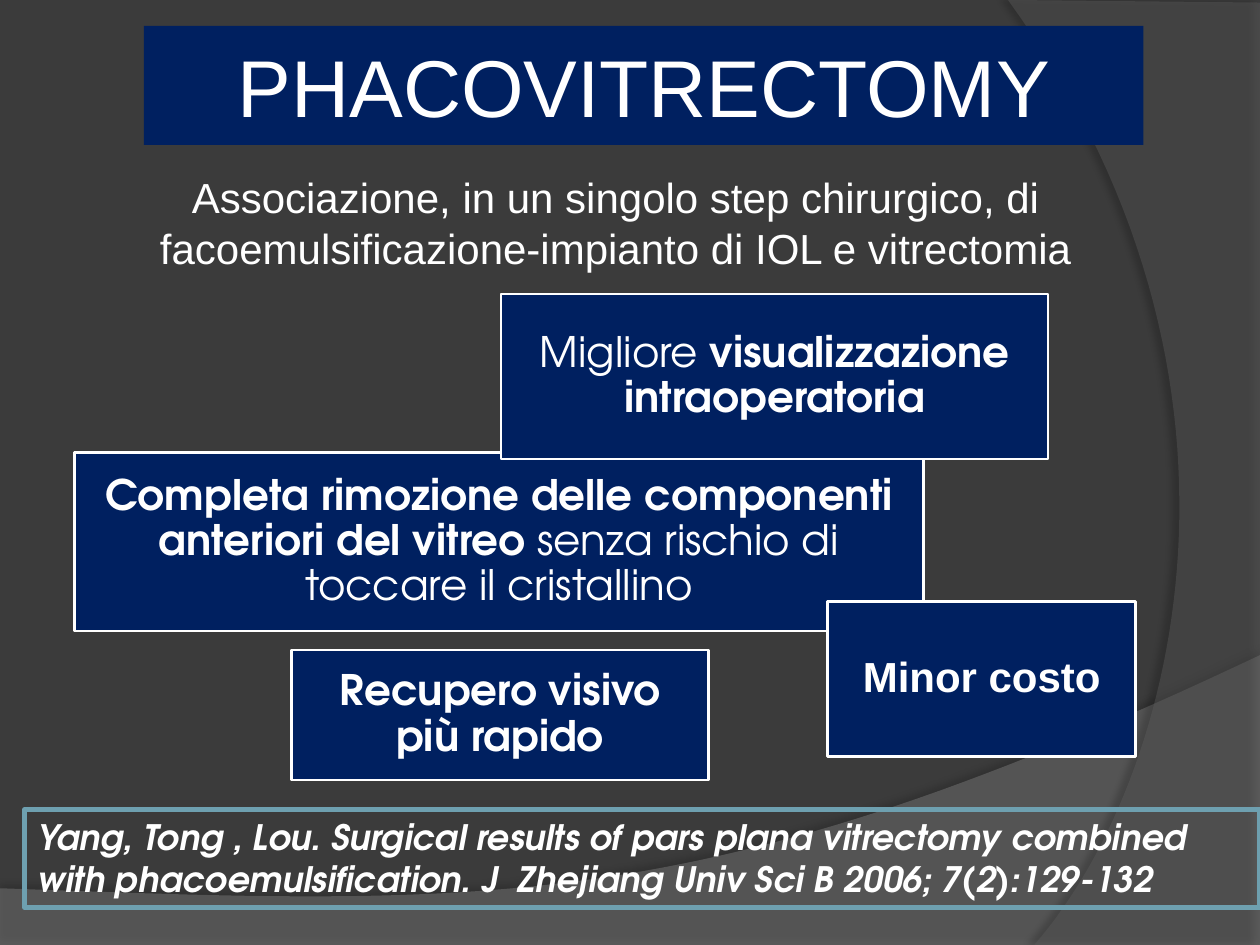
from dataclasses import dataclass
from typing import Optional

from lxml import etree
from pptx import Presentation
from pptx.dml.color import RGBColor
from pptx.enum import shapes, text
from pptx.oxml import ns
from pptx.util import Pt

Point = tuple[float, float]


@dataclass(frozen=True)
class Theme:
    background: str = "3B3B3B"
    wave: str = "7F7F7F"
    arc: str = "5E5E5E"
    navy: str = "002060"
    white: str = "FFFFFF"
    teal: str = "6EA0B0"
    sans: str = "Arial"
    geometric: str = "TeX Gyre Adventor"
    title_size: float = 46
    body_size: float = 24
    citation_size: float = 20


THEME = Theme()


@dataclass(frozen=True)
class Run:
    words: str
    bold: bool = False


@dataclass(frozen=True)
class Panel:
    left: float
    top: float
    width: float
    height: float
    runs: tuple[Run, ...]
    font: str = THEME.geometric
    size: float = THEME.body_size
    fill: Optional[str] = THEME.navy
    line: Optional[str] = THEME.white
    line_width: float = 1.5
    inset_x: float = 7.2
    inset_y: float = 7.2
    anchor: text.MSO_ANCHOR = text.MSO_ANCHOR.MIDDLE
    align: text.PP_ALIGN = text.PP_ALIGN.CENTER
    spacing: float = 0.9
    italic: bool = False


@dataclass(frozen=True)
class Swoosh:
    before: tuple[Point, ...]
    curve: tuple[Point, Point, Point, Point]
    color: str
    opacity: int
    shadow_opacity: int
    shadow_distance: float
    shadow_angle: int


def rgb(color: str) -> RGBColor:
    return RGBColor.from_string(color)


def bezier(curve: tuple[Point, Point, Point, Point], steps: int = 60) -> list[Point]:
    points = []
    for step in range(steps + 1):
        t = step / steps
        weights = ((1 - t) ** 3, 3 * t * (1 - t) ** 2, 3 * t**2 * (1 - t), t**3)
        points.append(tuple(sum(w * p[axis] for w, p in zip(weights, curve)) for axis in (0, 1)))
    return points


def draw_swoosh(slide, swoosh: Swoosh) -> None:
    outline = [(Pt(x), Pt(y)) for x, y in (*swoosh.before, *bezier(swoosh.curve))]
    builder = slide.shapes.build_freeform(*outline[0])
    builder.add_line_segments(outline[1:], close=True)
    shape = builder.convert_to_shape()
    shape.line.fill.background()
    shape.fill.solid()
    shape.fill.fore_color.rgb = rgb(swoosh.color)
    shape.shadow.inherit = False

    # Transparency and soft shadow
    properties = shape._element.spPr
    tint = properties.find(ns.qn("a:solidFill")).find(ns.qn("a:srgbClr"))
    etree.SubElement(tint, ns.qn("a:alpha"), val=str(swoosh.opacity * 1000))
    shadow = etree.SubElement(
        properties.find(ns.qn("a:effectLst")), ns.qn("a:outerShdw"),
        blurRad=str(Pt(4)), dist=str(Pt(swoosh.shadow_distance)),
        dir=str(swoosh.shadow_angle * 60000), algn="ctr", rotWithShape="0")
    shade = etree.SubElement(shadow, ns.qn("a:srgbClr"), val="000000")
    etree.SubElement(shade, ns.qn("a:alpha"), val=str(swoosh.shadow_opacity * 1000))


def draw_panel(slide, panel: Panel) -> None:
    box = (Pt(panel.left), Pt(panel.top), Pt(panel.width), Pt(panel.height))
    if panel.fill or panel.line:
        shape = slide.shapes.add_shape(shapes.MSO_SHAPE.RECTANGLE, *box)
        shape.shadow.inherit = False
    else:
        shape = slide.shapes.add_textbox(*box)

    if panel.fill:
        shape.fill.solid()
        shape.fill.fore_color.rgb = rgb(panel.fill)
    else:
        shape.fill.background()
    if panel.line:
        shape.line.color.rgb = rgb(panel.line)
        shape.line.width = Pt(panel.line_width)
    else:
        shape.line.fill.background()

    frame = shape.text_frame
    frame.word_wrap = True
    frame.vertical_anchor = panel.anchor
    frame.margin_left = frame.margin_right = Pt(panel.inset_x)
    frame.margin_top = frame.margin_bottom = Pt(panel.inset_y)

    paragraph = frame.paragraphs[0]
    paragraph.alignment = panel.align
    paragraph.line_spacing = panel.spacing
    font = paragraph.font
    font.name, font.size, font.italic = panel.font, Pt(panel.size), panel.italic
    font.color.rgb = rgb(THEME.white)
    for part in panel.runs:
        run = paragraph.add_run()
        run.text = part.words
        run.font.bold = part.bold


# Background curves
SWOOSHES = (
    Swoosh(((0, 507.6), (0, 540), (720, 540)),
           ((720, 374.4), (402.5, 524.9), (281.5, 517.7), (0, 507.6)),
           THEME.wave, 45, 35, 3.5, 270),
    Swoosh(((720, 1.5), (720, 540)),
           ((591, 540), (673.2, 445.7), (733, 216), (576, 0)),
           THEME.arc, 40, 45, 4, 180),
)

# Title and definition
HEADINGS = (
    Panel(82.2, 14.8, 571.2, 68, (Run("PHACOVITRECTOMY"),), font=THEME.sans,
          size=THEME.title_size, line=None, inset_x=3.6, inset_y=3.6, spacing=1),
    Panel(65.5, 94.5, 572.4, 65.5,
          (Run("Associazione, in un singolo step chirurgico, di "
               "facoemulsificazione-impianto di IOL e vitrectomia"),),
          font=THEME.sans, fill=None, line=None, inset_y=3.6,
          anchor=text.MSO_ANCHOR.TOP, spacing=1),
)

# Advantages, from back to front
ADVANTAGES = (
    Panel(42.5, 258.5, 485.3, 102.2,
          (Run("Completa rimozione delle componenti anteriori del vitreo ", True),
           Run("senza rischio di toccare il cristallino"))),
    Panel(286.4, 168, 312.5, 94.3,
          (Run("Migliore "), Run("visualizzazione intraoperatoria", True))),
    Panel(166.5, 371.5, 238.5, 74.2, (Run("Recupero visivo più rapido", True),)),
    Panel(473, 343.6, 176, 88.6, (Run("Minor costo", True),), font=THEME.sans),
)

# Source of the data
CITATION = Panel(
    14.2, 462.7, 705.6, 55.8,
    (Run("Yang, Tong , Lou. Surgical results of pars plana vitrectomy combined with "
         "phacoemulsification. J  Zhejiang Univ Sci B 2006; 7(2):129-132", True),),
    size=THEME.citation_size, fill=None, line=THEME.teal, line_width=3, inset_y=3.6,
    anchor=text.MSO_ANCHOR.TOP, align=text.PP_ALIGN.LEFT, spacing=1, italic=True)


def main() -> None:
    deck = Presentation()
    deck.slide_width, deck.slide_height = Pt(720), Pt(540)
    slide = deck.slides.add_slide(deck.slide_layouts[6])
    slide.background.fill.solid()
    slide.background.fill.fore_color.rgb = rgb(THEME.background)

    for swoosh in SWOOSHES:
        draw_swoosh(slide, swoosh)
    for panel in (*HEADINGS, *ADVANTAGES, CITATION):
        draw_panel(slide, panel)

    deck.save("out.pptx")


if __name__ == "__main__":
    main()
